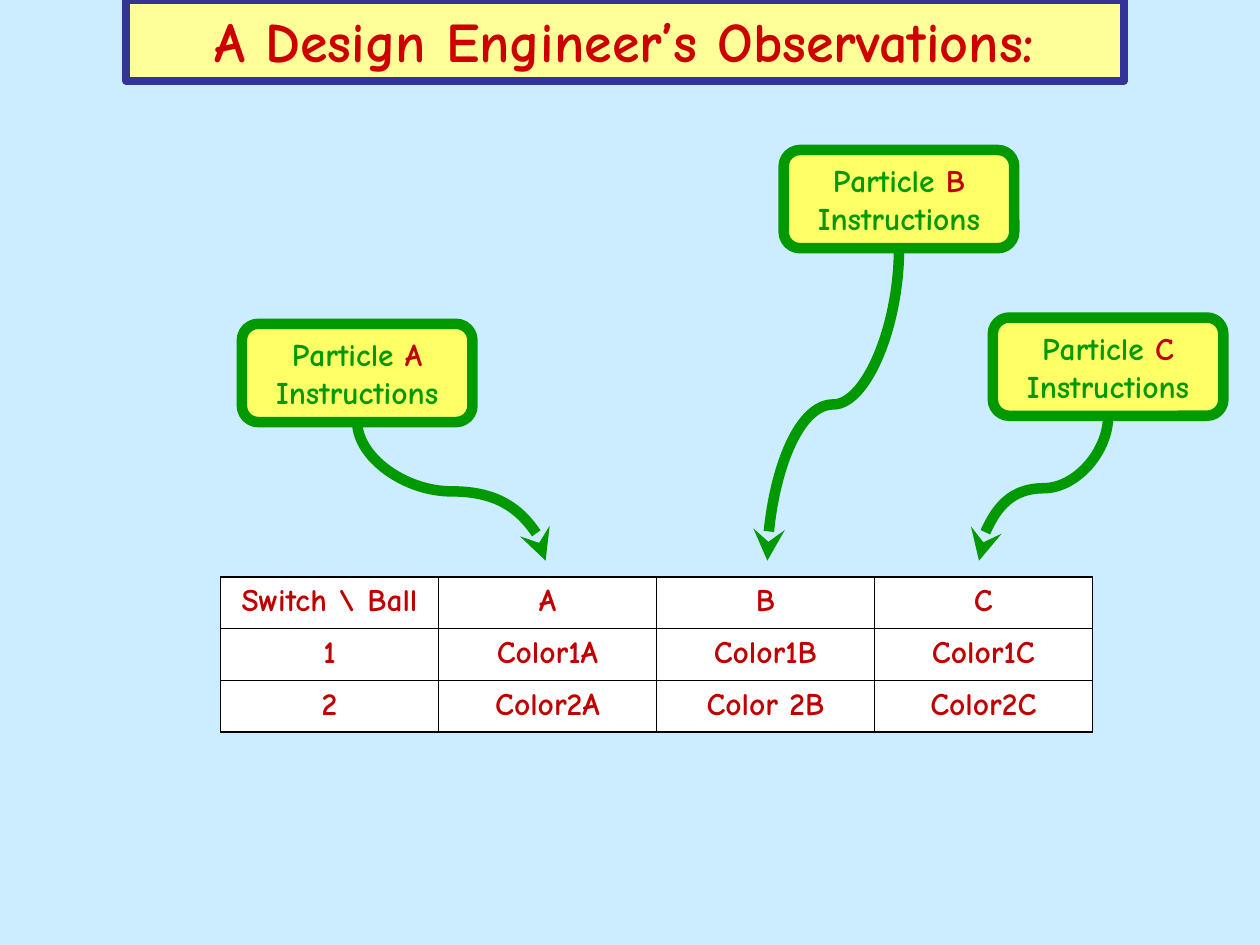
"""Builds the slide with three particle instruction boxes pointing at a table."""
import pptx
import pptx.dml.color
import pptx.enum.shapes
import pptx.enum.text
import pptx.oxml
import pptx.oxml.ns
import pptx.util

TITLE = "A Design Engineer’s Observations:"
ROWS = [
    ("Switch \\ Ball", "A", "B", "C"),
    ("1", "Color1A", "Color1B", "Color1C"),
    ("2", "Color2A", "Color 2B", "Color2C"),
]
PARTICLES = [
    {"name": "A", "box": (1.92, 2.57), "target": 4.33},
    {"name": "B", "box": (6.22, 1.19), "target": 6.09},
    {"name": "C", "box": (7.88, 2.52), "target": 7.77},
]
COLORS = {
    "sky": "CCECFF", "cream": "FFFF99", "navy": "333399", "red": "CC0000",
    "crimson": "C00000", "green": "009900", "yellow": "FFFF66",
    "white": "FFFFFF", "black": "000000",
}
FONT = "Comic Neue"
BOX_W, BOX_H = 1.83, 0.78
ARROW_END = 4.45
TABLE_LEFT, TABLE_TOP, COL_W, ROW_H = 1.75, 4.58, 1.73, 0.41

Inches = pptx.util.Inches
Pt = pptx.util.Pt


def rgb(name):
    return pptx.dml.color.RGBColor.from_string(COLORS[name])


def paint(fill, color):
    fill.solid()
    fill.fore_color.rgb = rgb(color)


def outline(shape, color, width):
    shape.line.color.rgb = rgb(color)
    shape.line.width = Pt(width)


def write(tf, runs, size):
    tf.word_wrap = True
    tf.auto_size = pptx.enum.text.MSO_AUTO_SIZE.NONE
    tf.vertical_anchor = pptx.enum.text.MSO_ANCHOR.MIDDLE
    fill_paragraph(tf.paragraphs[0], runs, size)


def fill_paragraph(p, runs, size):
    p.alignment = pptx.enum.text.PP_ALIGN.CENTER
    for text, color in runs:
        r = p.add_run()
        r.text = text
        r.font.name = FONT
        r.font.size = Pt(size)
        r.font.bold = True
        r.font.color.rgb = rgb(color)


def add_element(parent, xml):
    ns = pptx.oxml.ns.nsdecls("a")
    parent.append(pptx.oxml.parse_xml(xml.replace("NS", ns, 1)))


def add_title(s):
    sp = s.shapes.title
    sp.left, sp.top, sp.width, sp.height = map(Inches, (1, 0, 7.92, 0.64))
    paint(sp.fill, "cream")
    outline(sp, "navy", 4.5)
    write(sp.text_frame, [(TITLE, "red")], 32)


def add_table(s):
    n_rows, n_cols = len(ROWS), len(ROWS[0])
    frame = s.shapes.add_table(
        n_rows, n_cols, Inches(TABLE_LEFT), Inches(TABLE_TOP),
        Inches(COL_W * n_cols), Inches(ROW_H * n_rows))
    table = frame.table
    table.first_row = table.horz_banding = False
    for col in table.columns:
        col.width = Inches(COL_W)
    for row, texts in zip(table.rows, ROWS):
        row.height = Inches(ROW_H)
        for cell, text in zip(row.cells, texts):
            tcPr = cell._tc.get_or_add_tcPr()
            for side in "LRTB":
                add_element(tcPr, f'<a:ln{side} NS w="12700"><a:solidFill><a:srgbClr '
                                  f'val="{COLORS["black"]}"/></a:solidFill></a:ln{side}>')
            paint(cell.fill, "white")
            fill_paragraph(cell.text_frame.paragraphs[0], [(text, "crimson")], 18)


def add_box(s, name, left, top):
    sp = s.shapes.add_shape(
        pptx.enum.shapes.MSO_SHAPE.ROUNDED_RECTANGLE,
        Inches(left), Inches(top), Inches(BOX_W), Inches(BOX_H))
    sp.shadow.inherit = False
    paint(sp.fill, "yellow")
    outline(sp, "green", 6)
    write(sp.text_frame, [("Particle ", "green"), (name, "crimson"),
                          (" Instructions", "green")], 18)


def add_arrow(s, x1, y1, x2, y2):
    half_w, half_h = (y2 - y1) / 2, abs(x2 - x1) / 2
    mid_x, mid_y = (x1 + x2) / 2, (y1 + y2) / 2
    cxn = s.shapes.add_connector(
        pptx.enum.shapes.MSO_CONNECTOR.CURVE,
        Inches(mid_x - half_w), Inches(mid_y - half_h),
        Inches(mid_x + half_w), Inches(mid_y + half_h))
    outline(cxn, "green", 6)
    spPr = cxn._element.spPr
    xfrm = spPr.find(pptx.oxml.ns.qn("a:xfrm"))
    xfrm.set("rot", str((270 if x2 > x1 else 90) * 60000))
    if x2 > x1:
        xfrm.set("flipH", "1")
    add_element(cxn.line._get_or_add_ln(), '<a:tailEnd NS type="stealth"/>')
    add_element(spPr, "<a:effectLst NS/>")


def main():
    prs = pptx.Presentation()
    prs.slide_width, prs.slide_height = Inches(10), Inches(7.5)
    s = prs.slides.add_slide(prs.slide_layouts[5])
    paint(s.background.fill, "sky")
    add_title(s)
    add_table(s)
    for particle in PARTICLES:
        left, top = particle["box"]
        add_box(s, particle["name"], left, top)
        add_arrow(s, left + BOX_W / 2, top + BOX_H, particle["target"], ARROW_END)
    prs.save("out.pptx")


if __name__ == "__main__":
    main()
